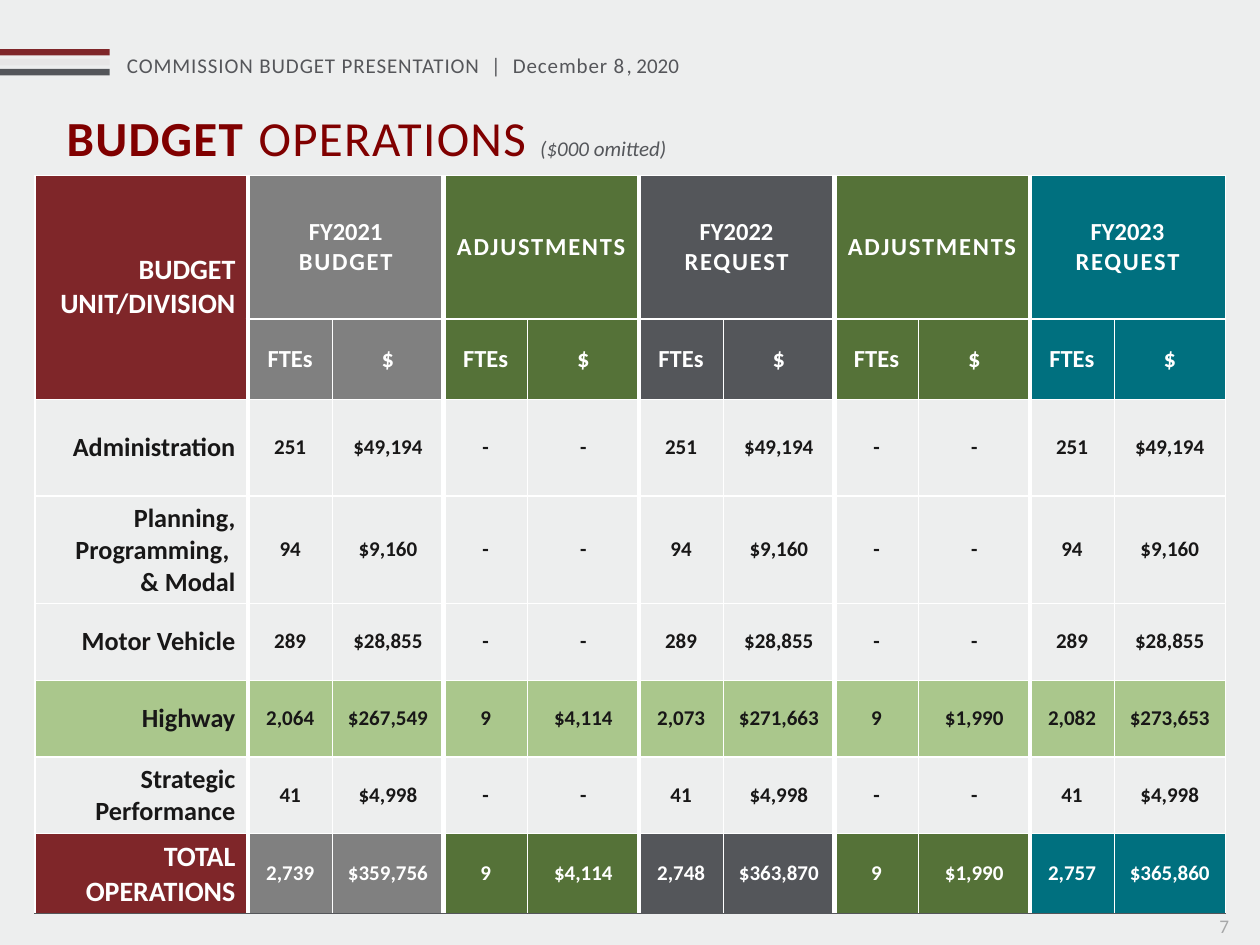
"""Builds the budget operations slide with its table of FTEs and dollars by division."""
from lxml import etree
from pptx import Presentation, util as u
from pptx.dml.color import RGBColor
from pptx.enum import shapes, text
from pptx.oxml.ns import qn

WHITE, INK, GRAY, RED, GREEN = "FFFFFF", "181717", "54565A", "7F2629", "557238"
LIGHT_GREEN = "AAC78C"


def add_run(p, words, size, color, bold=False, italic=False, spacing=0):
    for i, line in enumerate(words.split("\n")):
        if i:
            p.add_line_break()
        r = p.add_run()
        r.text = line
        r.font.name, r.font.size = "Calibri", u.Pt(size)
        r.font.bold, r.font.italic = bold, italic
        r.font.color.rgb = RGBColor.from_string(color)
        if spacing:
            r._r.get_or_add_rPr().set("spc", str(int(spacing * 100)))


def add_border(cell, side, color, width):
    ln = etree.SubElement(cell._tc.get_or_add_tcPr(), qn("a:ln" + side), w=str(u.Pt(width)))
    fill = etree.SubElement(ln, qn("a:solidFill"))
    etree.SubElement(fill, qn("a:srgbClr"), val=color)


prs = Presentation()
prs.slide_width, prs.slide_height = u.Cm(25.4), u.Cm(19.05)
s = prs.slides.add_slide(prs.slide_layouts[5])
s.background.fill.solid()
s.background.fill.fore_color.rgb = RGBColor.from_string("EDEEEE")

for i, color in enumerate([RED, "E7E6E6", GRAY]):
    sp = s.shapes.add_shape(shapes.MSO_SHAPE.RECTANGLE, 0, u.Cm(0.99 + 0.2 * i), u.Cm(2.21), u.Cm(0.13))
    sp.shadow.inherit = False
    sp.fill.solid()
    sp.fill.fore_color.rgb = RGBColor.from_string(color)
    sp.line.fill.background()

tf = s.shapes.add_textbox(u.Cm(2.31), u.Cm(0.94), u.Cm(12.3), u.Cm(1.27)).text_frame
tf.word_wrap = True
add_run(tf.paragraphs[0], "COMMISSION BUDGET PRESENTATION  |  December 8", 12, "55565A", spacing=0.5)
add_run(tf.paragraphs[0], ", 2020", 12, "55565A")

title = s.shapes.title
title.left, title.top, title.width, title.height = u.Cm(1.09), u.Cm(1.9), u.Cm(23.06), u.Cm(1.63)
tf = title.text_frame
tf.auto_size, tf.vertical_anchor = text.MSO_AUTO_SIZE.NONE, text.MSO_ANCHOR.TOP
p = tf.paragraphs[0]
p.alignment = text.PP_ALIGN.LEFT
add_run(p, "BUDGET", 28, "800000", bold=True, spacing=0.8)
add_run(p, " ", 32, "800000", bold=True, spacing=0.8)
add_run(p, "OPERATIONS ", 28, "800000", spacing=0.8)
add_run(p, "($000 omitted)", 12, GRAY, italic=True)

tf = s.shapes.add_textbox(u.Cm(24.33), u.Cm(18.31), u.Cm(1), u.Cm(0.7)).text_frame
add_run(tf.paragraphs[0], "7", 11, "A7A8A9")

groups = [
    (["FY2021", "BUDGET"], "808080"),
    (["ADJUSTMENTS"], GREEN),
    (["FY2022", "REQUEST"], GRAY),
    (["ADJUSTMENTS"], GREEN),
    (["FY2023", "REQUEST"], "00707F"),
]
rows = [
    ["BUDGET UNIT/DIVISION"] + [words for heading, _ in groups for words in (heading, "")],
    [""] + ["FTEs", "$"] * 5,
    ["Administration"] + ["251", "$49,194", "-", "-"] * 2 + ["251", "$49,194"],
    ["Planning, Programming, \n& Modal"] + ["94", "$9,160", "-", "-"] * 2 + ["94", "$9,160"],
    ["Motor Vehicle"] + ["289", "$28,855", "-", "-"] * 2 + ["289", "$28,855"],
    ["Highway", "2,064", "$267,549", "9", "$4,114", "2,073", "$271,663", "9", "$1,990", "2,082", "$273,653"],
    ["Strategic Performance"] + ["41", "$4,998", "-", "-"] * 2 + ["41", "$4,998"],
    ["TOTAL OPERATIONS", "2,739", "$359,756", "9", "$4,114", "2,748", "$363,870", "9", "$1,990",
     "2,757", "$365,860"],
]
widths = [4.29] + [1.7, 2.24] * 5
heights = [2.9, 1.62, 1.95, 2.16, 1.55, 1.55, 1.55, 1.6]
highway, total, last = 5, len(rows) - 1, len(widths) - 1

table = s.shapes.add_table(len(rows), len(widths), u.Cm(0.71), u.Cm(3.53),
                           u.Cm(sum(widths)), u.Cm(sum(heights))).table
table.first_row = table.horz_banding = False
for column, width in zip(table.columns, widths):
    column.width = u.Cm(width)
for row, height in zip(table.rows, heights):
    row.height = u.Cm(height)

for i, row in enumerate(rows):
    for j, words in enumerate(row):
        cell = table.cell(i, j)
        colored = i < 2 or i == total
        if j:
            add_border(cell, "L", WHITE, 3 if j % 2 else 0.75)
        if j < last:
            add_border(cell, "R", WHITE, 0.75 if j % 2 else 3)
        add_border(cell, "T", WHITE, 0.75)
        add_border(cell, "B", *((GRAY, 1) if i == total else (WHITE, 0.75)))

        if colored or i == highway:
            band = RED if j == 0 else groups[(j - 1) // 2][1]
            cell.fill.solid()
            cell.fill.fore_color.rgb = RGBColor.from_string(band if colored else LIGHT_GREEN)
        else:
            cell.fill.background()

        cell.vertical_anchor = text.MSO_ANCHOR.MIDDLE
        if j:
            cell.margin_left = cell.margin_right = u.Cm(0.13)
            size = 14 if i < 2 else 12
        else:
            size = 16 if colored else 15
        if not words:
            continue
        lines = words if isinstance(words, list) else [words]
        for k, line in enumerate(lines):
            p = cell.text_frame.add_paragraph() if k else cell.text_frame.paragraphs[0]
            p.alignment = text.PP_ALIGN.CENTER if j else text.PP_ALIGN.RIGHT
            spaced = i == 0 and j > 0 and not line.startswith("FY")
            add_run(p, line, size, WHITE if colored else INK, bold=True, spacing=int(spaced))

table.cell(0, 0).merge(table.cell(1, 0))
for j in range(1, last, 2):
    table.cell(0, j).merge(table.cell(0, j + 1))

prs.save("out.pptx")
